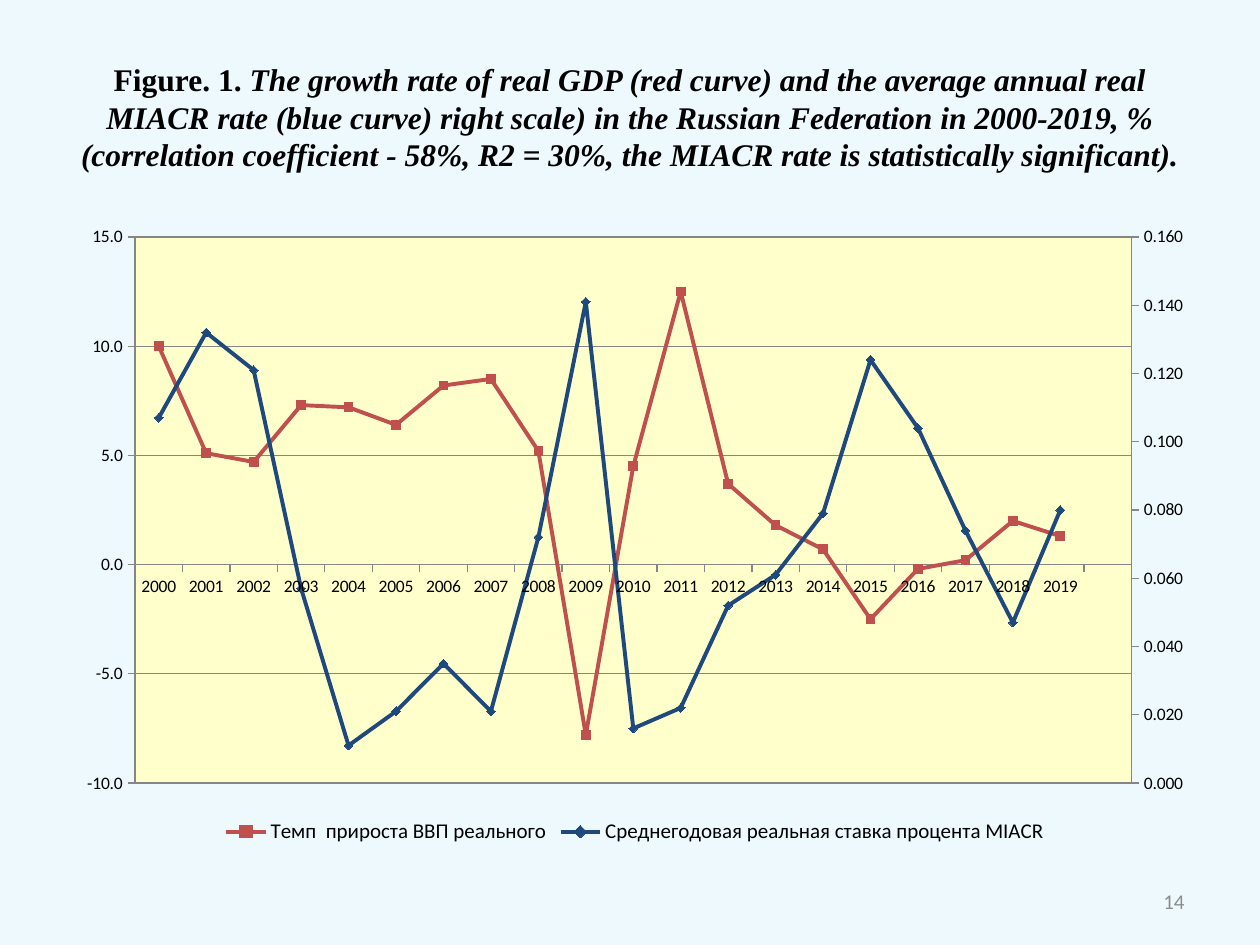
import copy
from dataclasses import dataclass

import lxml.etree
import pptx
import pptx.chart.axis
import pptx.chart.data
import pptx.dml.color
import pptx.enum.chart
import pptx.enum.text
import pptx.oxml
import pptx.oxml.ns
import pptx.util

Inches = pptx.util.Inches
Pt = pptx.util.Pt
qn = pptx.oxml.ns.qn


@dataclass(frozen=True)
class Theme:
    back: str = "EEF9FE"
    plot: str = "FFFFCC"
    ink: str = "000000"
    grey: str = "8C8C8C"
    grid: str = "868686"
    red: str = "C0504D"
    blue: str = "1F497D"
    serif: str = "Times New Roman"
    sans: str = "Calibri"
    head: int = 18
    small: int = 12
    axis: int = 10


YEARS = [str(year) for year in range(2000, 2020)] + [""]
GROWTH = [10, 5.1, 4.7, 7.3, 7.2, 6.4, 8.2, 8.5, 5.2, -7.8, 4.5,
          12.5, 3.7, 1.8, 0.7, -2.5, -0.2, 0.2, 2, 1.3, None]
RATE = [0.107, 0.132, 0.121, 0.057, 0.011, 0.021, 0.035, 0.021, 0.072, 0.141, 0.016,
        0.022, 0.052, 0.061, 0.079, 0.124, 0.104, 0.074, 0.047, 0.08, None]


def rgb(code):
    return pptx.dml.color.RGBColor.from_string(code)


class Deck:
    def __init__(self, theme):
        self.theme = theme
        self.file = pptx.Presentation()
        self.file.slide_width = Inches(10)
        self.file.slide_height = Inches(7.5)
        self.slide = self.file.slides.add_slide(self.file.slide_layouts[5])
        self.paint(self.slide.background, theme.back)

    def paint(self, part, color):
        part.fill.solid()
        part.fill.fore_color.rgb = rgb(color)

    def style(self, font, name, size, color):
        font.name = name
        font.size = Pt(size)
        font.color.rgb = rgb(color)

    def title(self, label, words, box):
        shape = self.slide.shapes.title
        shape.left, shape.top, shape.width, shape.height = map(Inches, box)
        frame = shape.text_frame
        frame.auto_size = pptx.enum.text.MSO_AUTO_SIZE.NONE
        frame.vertical_anchor = pptx.enum.text.MSO_ANCHOR.MIDDLE
        para = frame.paragraphs[0]
        para.alignment = pptx.enum.text.PP_ALIGN.CENTER
        self.style(para.font, self.theme.serif, self.theme.head, self.theme.ink)
        para.font.bold = True
        para.add_run().text = label
        run = para.add_run()
        run.text = words
        run.font.italic = True

    def number(self, text, box):
        frame = self.slide.shapes.add_textbox(*map(Inches, box)).text_frame
        frame.word_wrap = True
        frame.vertical_anchor = pptx.enum.text.MSO_ANCHOR.MIDDLE
        para = frame.paragraphs[0]
        para.text = text
        para.alignment = pptx.enum.text.PP_ALIGN.RIGHT
        self.style(para.font, self.theme.sans, self.theme.small, self.theme.grey)

    def scale(self, axis, low, high, step, form):
        axis.minimum_scale = low
        axis.maximum_scale = high
        axis.major_unit = step
        axis.tick_labels.number_format = form
        axis.tick_labels.number_format_is_linked = False

    def chart(self, cats, series, box):
        data = pptx.chart.data.CategoryChartData()
        data.categories = cats
        for name, vals, form, *_ in series:
            data.add_series(name, vals, form)
        kind = pptx.enum.chart.XL_CHART_TYPE.LINE_MARKERS
        chart = self.slide.shapes.add_chart(kind, *map(Inches, box), data).chart
        chart.has_title = False
        self.style(chart.font, self.theme.sans, self.theme.axis, self.theme.ink)

        # Legend
        chart.has_legend = True
        chart.legend.position = pptx.enum.chart.XL_LEGEND_POSITION.BOTTOM
        chart.legend.include_in_layout = False
        self.style(chart.legend.font, self.theme.sans, self.theme.small, self.theme.ink)

        # Lines and markers
        for line, (*_, color, mark) in zip(chart.plots[0].series, series):
            line.smooth = False
            line.format.line.color.rgb = rgb(color)
            line.format.line.width = Pt(2.25)
            line.marker.style = mark
            line.marker.size = 5
            self.paint(line.marker.format, color)
            line.marker.format.line.color.rgb = rgb(color)

        # Left and bottom axes
        for axis in (chart.category_axis, chart.value_axis):
            axis.major_tick_mark = pptx.enum.chart.XL_TICK_MARK.OUTSIDE
            axis.minor_tick_mark = pptx.enum.chart.XL_TICK_MARK.NONE
            axis.format.line.color.rgb = rgb(self.theme.grid)
        axis.has_major_gridlines = True
        axis.major_gridlines.format.line.color.rgb = rgb(self.theme.grid)
        self.scale(axis, -10, 15, 5, series[0][2])

        right = self.split(chart)
        self.scale(right, 0, 0.16, 0.02, series[1][2])
        self.frame(chart, x=0.062, y=0.036, w=0.873, h=0.86)

    def split(self, chart):
        """Move the second series to its own pair of axes; return the right one."""
        first = chart.plots[0].series[0]._element.getparent()
        area = first.getparent()
        other = copy.deepcopy(first)
        first.remove(first.findall(qn("c:ser"))[1])
        other.remove(other.find(qn("c:ser")))
        first.addnext(other)
        base, side = (copy.deepcopy(area.find(qn(tag))) for tag in ("c:catAx", "c:valAx"))
        area.findall(qn("c:valAx"))[-1].addnext(side)
        side.addnext(base)
        ids = {base.find(qn("c:axId")).get("val"): "5001",
               side.find(qn("c:axId")).get("val"): "5002"}
        for part in (other, base, side):
            for node in part.iter(qn("c:axId"), qn("c:crossAx")):
                node.set("val", ids[node.get("val")])
        side.find(qn("c:axPos")).set("val", "r")
        side.find(qn("c:crosses")).set("val", "max")
        pptx.chart.axis.CategoryAxis(base).visible = False
        right = pptx.chart.axis.ValueAxis(side)
        right.has_major_gridlines = False
        return right

    def frame(self, chart, **place):
        """Fix the inner plot area and give it a fill and border."""
        area = chart.plots[0].series[0]._element.getparent().getparent()
        for old in area.findall(qn("c:layout")):
            area.remove(old)
        layout = lxml.etree.Element(qn("c:layout"))
        manual = lxml.etree.SubElement(layout, qn("c:manualLayout"))
        rules = {"layoutTarget": "inner", "xMode": "edge", "yMode": "edge", **place}
        for tag, val in rules.items():
            lxml.etree.SubElement(manual, qn("c:" + tag)).set("val", str(val))
        area.insert(0, layout)
        area.append(pptx.oxml.parse_xml(
            f'<c:spPr {pptx.oxml.ns.nsdecls("c", "a")}>'
            f'<a:solidFill><a:srgbClr val="{self.theme.plot}"/></a:solidFill>'
            f'<a:ln w="9525"><a:solidFill><a:srgbClr val="{self.theme.grid}"/>'
            '</a:solidFill></a:ln></c:spPr>'))


def main():
    theme = Theme()
    deck = Deck(theme)
    mark = pptx.enum.chart.XL_MARKER_STYLE

    # Heading
    deck.title(
        "Figure. 1. ",
        "The growth rate of real GDP (red curve) and the average annual real MIACR rate "
        "(blue curve) right scale) in the Russian Federation in 2000-2019, % (correlation "
        "coefficient - 58%, R2 = 30%, the MIACR rate is statistically significant).",
        (0.5, 0.3, 9, 1.25))

    # Growth on the left scale, rate on the right
    deck.chart(YEARS, [
        ("Темп  прироста ВВП реального", GROWTH, "0.0", theme.red, mark.SQUARE),
        ("Среднегодовая реальная ставка процента MIACR", RATE, "0.000",
         theme.blue, mark.DIAMOND),
    ], (0.51, 1.7, 9.06, 5.04))

    # Page number
    deck.number("14", (7.17, 6.95, 2.33, 0.4))
    deck.file.save("out.pptx")


if __name__ == "__main__":
    main()
